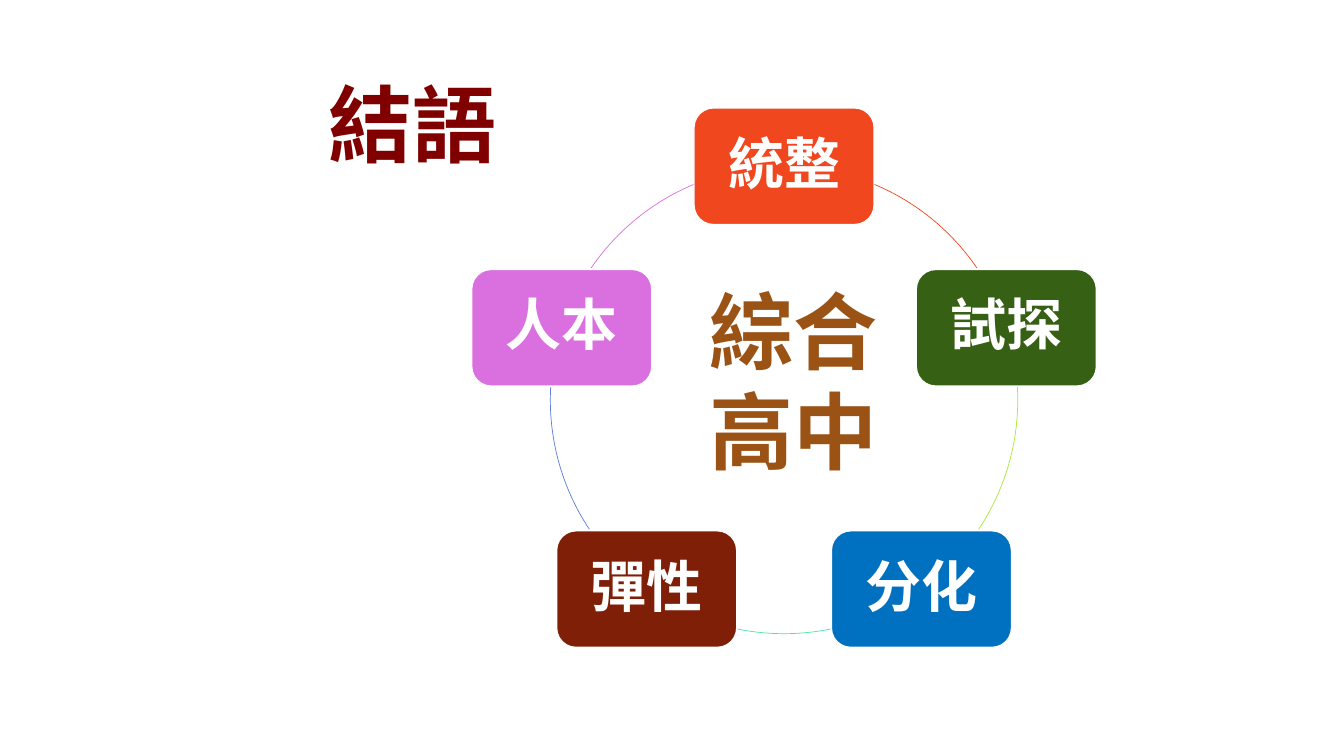
"""Build the closing slide: a ring of five principles around one theme."""
from dataclasses import dataclass
import math

from lxml import etree
from pptx import Presentation
from pptx import util as u
from pptx.dml.color import RGBColor
from pptx.enum import shapes, text
from pptx.oxml import ns


@dataclass(frozen=True)
class Theme:
    font: str = "Noto Sans CJK SC"
    heading_size: int = 60
    node_size: int = 40
    heading: str = "800000"
    center: str = "9A5315"
    white: str = "FFFFFF"


theme = Theme()


def style(paragraph, size, color):
    """Set the bold font of a paragraph for Latin and East Asian text."""
    font = paragraph.font
    font.size = u.Pt(size)
    font.bold = True
    font.color.rgb = RGBColor.from_string(color)
    font.name = theme.font
    properties = paragraph._p.pPr.find(ns.qn("a:defRPr"))
    etree.SubElement(properties, ns.qn("a:ea"), typeface=theme.font)


presentation = Presentation()
presentation.slide_width = u.Cm(33.87)
presentation.slide_height = u.Cm(19.05)
slide = presentation.slides.add_slide(presentation.slide_layouts[6])

title = slide.shapes.add_textbox(u.Cm(8.03), u.Cm(0.86), u.Cm(12.78), u.Cm(3.66))
title.text_frame.word_wrap = True
title.text_frame.vertical_anchor = text.MSO_ANCHOR.BOTTOM
title_paragraph = title.text_frame.paragraphs[0]
title_paragraph.text = "結語"
title_paragraph.line_spacing = 0.9
style(title_paragraph, theme.heading_size, theme.heading)

center_x, center_y, radius = 19.76, 10.08, 5.89
node_width, node_height = 4.54, 2.94
principles = [
    ("統整", "F1471F", "F1471F", -67.2, -34.4),
    ("試探", "366013", "A5EB34", -3.2, 33.6),
    ("分化", "0070C0", "49E6A3", 78.5, 101.5),
    ("彈性", "801F08", "5C7CE2", 146.4, 183.2),
    ("人本", "DA6FDF", "DA6FDF", -145.6, -112.8),
]

for index, (label, fill, arc_color, start, end) in enumerate(principles):
    angle = math.radians(72 * index - 90)
    node = slide.shapes.add_shape(
        shapes.MSO_SHAPE.ROUNDED_RECTANGLE,
        u.Cm(center_x + radius * math.cos(angle) - node_width / 2),
        u.Cm(center_y + radius * math.sin(angle) - node_height / 2),
        u.Cm(node_width),
        u.Cm(node_height),
    )
    node.shadow.inherit = False
    node.fill.solid()
    node.fill.fore_color.rgb = RGBColor.from_string(fill)
    node.line.color.rgb = RGBColor.from_string(theme.white)
    node.line.width = u.Pt(1)
    frame = node.text_frame
    frame.word_wrap = True
    frame.vertical_anchor = text.MSO_ANCHOR.MIDDLE
    frame.margin_left = frame.margin_right = u.Cm(0.43)
    frame.margin_top = frame.margin_bottom = u.Cm(0.43)
    paragraph = frame.paragraphs[0]
    paragraph.text = label
    paragraph.alignment = text.PP_ALIGN.CENTER
    paragraph.line_spacing = 0.9
    paragraph.space_after = u.Pt(14)
    style(paragraph, theme.node_size, theme.white)

    arc = slide.shapes.add_shape(
        shapes.MSO_SHAPE.ARC,
        u.Cm(center_x - radius),
        u.Cm(center_y - radius),
        u.Cm(2 * radius),
        u.Cm(2 * radius),
    )
    arc.adjustments[0] = start % 360 * 0.6
    arc.adjustments[1] = end % 360 * 0.6
    arc.shadow.inherit = False
    arc.fill.background()
    arc.line.color.rgb = RGBColor.from_string(arc_color)
    arc.line.width = u.Pt(0.5)

center = slide.shapes.add_textbox(u.Cm(17.63), u.Cm(6.91), u.Cm(5.36), u.Cm(5.38))
center.text_frame.word_wrap = True
center.text_frame.text = "綜合\n高中"
for paragraph in center.text_frame.paragraphs:
    style(paragraph, theme.heading_size, theme.center)

presentation.save("out.pptx")
